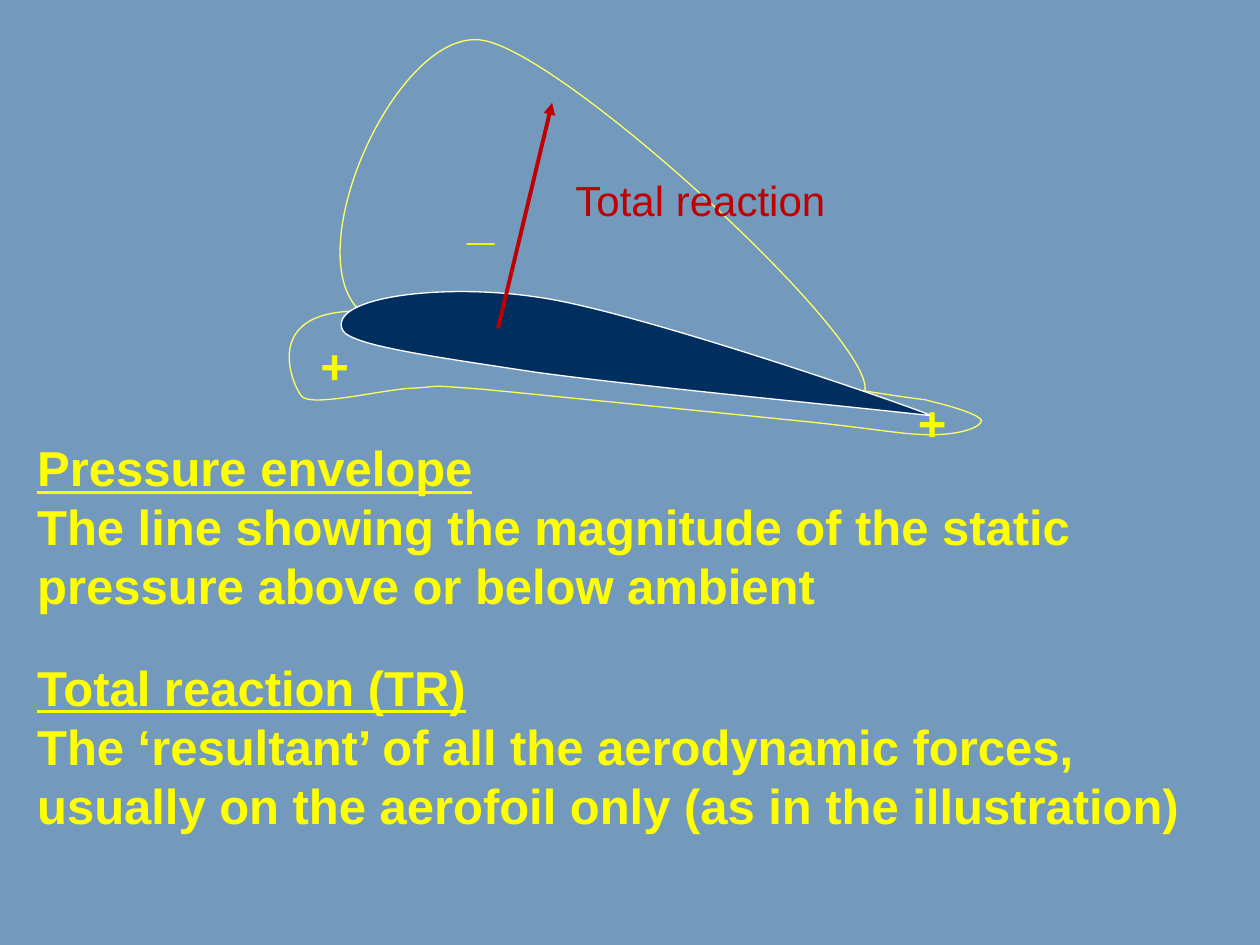
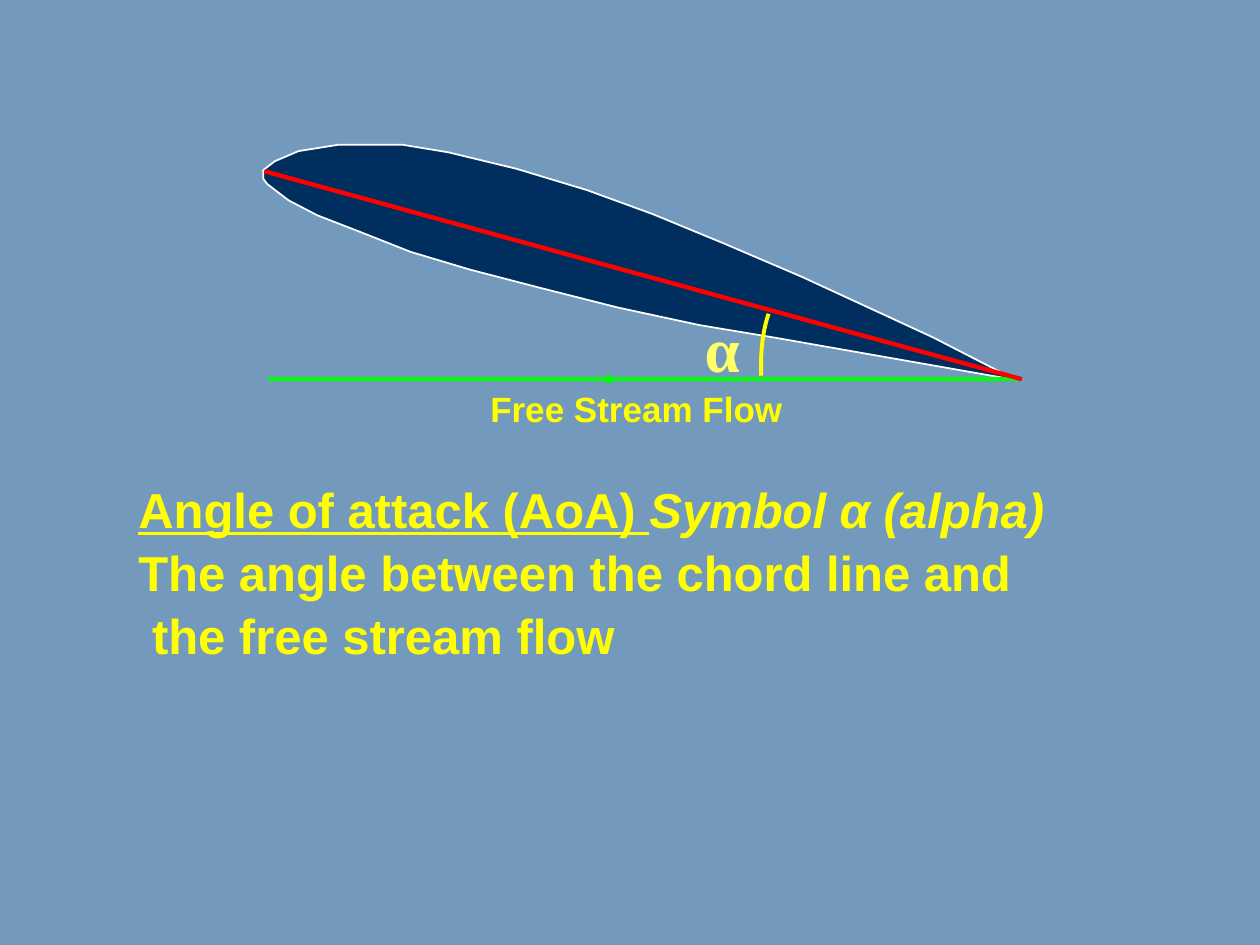
import copy

import pptx
import pptx.dml.color
import pptx.enum.shapes
import pptx.oxml
import pptx.oxml.ns
import pptx.util

Pt = pptx.util.Pt
RGBColor = pptx.dml.color.RGBColor
qn = pptx.oxml.ns.qn
DRAWING_NAMESPACE = pptx.oxml.ns.nsdecls("a")

SKY = RGBColor(0x73, 0x9A, 0xBC)
NAVY = RGBColor(0x00, 0x2F, 0x5F)
WHITE = RGBColor(0xFF, 0xFF, 0xFF)
YELLOW = RGBColor(0xFF, 0xFF, 0x00)
SIGN_YELLOW = RGBColor(0xFA, 0xFD, 0x00)
PALE_YELLOW = RGBColor(0xFF, 0xFF, 0x66)
DARK_RED = RGBColor(0xC0, 0x00, 0x00)
RED = RGBColor(0xFF, 0x00, 0x00)
GREEN = RGBColor(0x00, 0xFF, 0x00)

SPACE_WIDTH = 7.8

# Definitions: (top, heading, explanation)
DEFINITIONS = [
    (246.7, "Pressure envelope",
     "The line showing the magnitude of the static pressure above or below ambient"),
    (372.2, "Total reaction (TR)",
     "The ‘resultant’ of all the aerodynamic forces, usually on the aerofoil only "
     "(as in the illustration)"),
]
# Pressure signs: (text, left, top)
PRESSURE_SIGNS = [("+", 176, 187.9), ("+", 517.5, 221), ("_", 259.9, 105.1)]

# Curves: a start point, then two control points and an end point per segment
SUCTION_ENVELOPE = [
    (205.9, 177.8),
    (169.2, 144), (227.5, 15.1), (275.8, 23),
    (324, 31), (505.4, 198.7), (493.9, 224.6),
]
PRESSURE_ENVELOPE = [
    (203, 177.8),
    (150.5, 178.6), (166.3, 218.2), (172.1, 226.1),
    (177.1, 233.3), (218.2, 222.5), (236.2, 221.8),
    (253.4, 221), (239.8, 219.6), (276.5, 222.5),
    (313.9, 226.1), (414, 236.2), (456.5, 240.5),
    (499.7, 244.8), (514.8, 248.4), (532.1, 248.4),
    (549.4, 248.4), (560.2, 244.1), (560.9, 240.5),
    (560.9, 237.6), (545.8, 232.6), (533.5, 229.7),
    (522, 226.8), (542.9, 231.1), (488.2, 222.5),
    (432.7, 213.8), (257.8, 182.9), (203, 177.8),
]
# The cambered aerofoil lies level here and is turned when drawn
AEROFOIL_TILT = 8.4
CAMBERED_AEROFOIL = [
    (196, 212.8),
    (184.8, 195.6), (248.3, 177.5), (304.5, 177.9),
    (361.1, 177.5), (533.4, 210.3), (535.9, 212.1),
    (493.1, 213.4), (363.8, 220.1), (307.1, 220.5),
    (250.3, 220.2), (201.7, 220.8), (196, 212.8),
]
ANGLE_ARC = [
    (434.9, 214.6),
    (434.9, 212.4), (434.9, 210.2), (434.9, 208.1),
    (434.9, 198), (436.3, 187.9), (439.2, 179.3),
]
ANGLE_ARC_CENTRE = (469.4, 208.1)
# Corners of the straight-sided aerofoil
INCLINED_AEROFOIL = [
    (581.8, 217.4), (442.8, 193), (399.6, 185.8), (352.8, 175.7), (307.4, 164.2),
    (268.6, 154.1), (234.7, 144), (207.4, 133.2), (181.4, 123.1), (164.9, 114.5),
    (152.6, 105.1), (150.5, 102.2), (150.5, 97.2), (157, 92.2), (170.6, 86.4),
    (193, 82.8), (211, 82.8), (230.4, 82.8), (256.3, 87.1), (295.2, 96.5),
    (335.5, 108.7), (373, 122.4), (413.3, 139), (458.6, 158.4), (494.6, 175),
    (533.5, 193), (579.6, 216.7),
]


def add_outline(slide, points, line_color, line_width, fill_color=None, closed=False):
    corners = [(Pt(x), Pt(y)) for x, y in points]
    builder = slide.shapes.build_freeform(*corners[0])
    builder.add_line_segments(corners[1:], close=closed)
    outline = builder.convert_to_shape()
    outline.shadow.inherit = False
    if fill_color is None:
        outline.fill.background()
    else:
        outline.fill.solid()
        outline.fill.fore_color.rgb = fill_color
    outline.line.color.rgb = line_color
    outline.line.width = Pt(line_width)
    return outline


def outline_element(outline):
    return next(outline._element.iter(qn("a:path")))


def bend(outline):
    """Turn each full group of three straight segments into one cubic Bézier."""
    segments = outline_element(outline).findall(qn("a:lnTo"))
    for first in range(0, len(segments) - 2, 3):
        curve = pptx.oxml.parse_xml(f"<a:cubicBezTo {DRAWING_NAMESPACE}/>")
        segments[first].addprevious(curve)
        for segment in segments[first:first + 3]:
            curve.append(segment[0])
            segment.getparent().remove(segment)


def add_curve(slide, controls, line_color, line_width, fill_color=None):
    outline = add_outline(slide, controls, line_color, line_width, fill_color, closed=True)
    bend(outline)
    return outline


def add_angle_arc(slide):
    """Draw the arc with a line, and its sector up to the centre without one."""
    arc = add_outline(slide, ANGLE_ARC + [ANGLE_ARC_CENTRE], YELLOW, 2.25)
    bend(arc)
    stroke = outline_element(arc)
    sector = copy.deepcopy(stroke)
    sector.set("stroke", "0")
    sector.append(pptx.oxml.parse_xml(f"<a:close {DRAWING_NAMESPACE}/>"))
    stroke.remove(stroke.find(qn("a:lnTo")))
    stroke.set("fill", "none")
    stroke.addnext(sector)


def add_line(slide, start, end, color, width, arrow=False):
    line = slide.shapes.add_connector(
        pptx.enum.shapes.MSO_CONNECTOR.STRAIGHT,
        Pt(start[0]), Pt(start[1]), Pt(end[0]), Pt(end[1]))
    line.line.color.rgb = color
    line.line.width = Pt(width)
    properties = line._element.spPr
    if arrow:
        properties.find(qn("a:ln")).append(pptx.oxml.parse_xml(
            f'<a:tailEnd {DRAWING_NAMESPACE} type="triangle"/>'))
    properties.append(pptx.oxml.parse_xml(f"<a:effectLst {DRAWING_NAMESPACE}/>"))


def add_text(slide, paragraphs, left, top, width, height, size=28, color=YELLOW,
             bold=True, font="Arial", wrap=False):
    """Add a text box and return its paragraphs; each one is given as a list of spans."""
    box = slide.shapes.add_textbox(Pt(left), Pt(top), Pt(width), Pt(height))
    frame = box.text_frame
    frame.word_wrap = wrap
    for number, spans in enumerate(paragraphs):
        paragraph = frame.paragraphs[0] if number == 0 else frame.add_paragraph()
        for text in spans:
            paragraph.add_run().text = text
        paragraph.font.name = font
        paragraph.font.size = Pt(size)
        paragraph.font.bold = bold
        paragraph.font.color.rgb = color
    return frame.paragraphs


def add_definition(slide, top, heading, explanation):
    paragraphs = add_text(slide, [[heading], [explanation]],
                          14.2, top, 686.2, 108.7, wrap=True)
    paragraphs[0].font.underline = True


def add_total_reaction_slide(deck):
    slide = deck.slides.add_slide(deck.slide_layouts[6])
    pressure_definition, reaction_definition = DEFINITIONS
    add_definition(slide, *pressure_definition)
    for envelope in (SUCTION_ENVELOPE, PRESSURE_ENVELOPE):
        add_curve(slide, envelope, PALE_YELLOW, 0.75)
    aerofoil = add_curve(slide, CAMBERED_AEROFOIL, WHITE, 0.75, NAVY)
    aerofoil.rotation = AEROFOIL_TILT
    for sign, left, top in PRESSURE_SIGNS:
        add_text(slide, [[sign]], left, top, 31, 41, color=SIGN_YELLOW)
    add_text(slide, [["Total reaction"]], 321.8, 96.1, 158.4, 36,
             size=24, color=DARK_RED, bold=False)
    add_line(slide, (284.6, 187.7), (315.5, 58.8), DARK_RED, 2.25, arrow=True)
    add_definition(slide, *reaction_definition)


def add_angle_of_attack_slide(deck):
    slide = deck.slides.add_slide(deck.slide_layouts[6])
    add_outline(slide, INCLINED_AEROFOIL, WHITE, 1, NAVY)
    paragraphs = add_text(
        slide,
        [["Angle of attack (AoA) ", "Symbol α (alpha)"],
         ["The angle between the chord line and"],
         ["the free stream flow"]],
        72, 274.3, 594, 112.3, wrap=True)
    heading, symbol = paragraphs[0].runs
    heading.font.underline = True
    symbol.font.italic = True
    for number, paragraph in enumerate(paragraphs):
        paragraph.line_spacing = 0.9
        paragraph.space_before = Pt(5.8 if number else 0)
    paragraphs[2]._p.get_or_add_pPr().set("marL", str(Pt(SPACE_WIDTH)))

    add_line(slide, (582.5, 216.7), (153.4, 216.7), GREEN, 2)
    add_line(slide, (278.6, 216.7), (352.8, 216.7), GREEN, 2, arrow=True)
    add_text(slide, [["α"]], 395.5, 173.5, 34.6, 50.4,
             size=36, color=PALE_YELLOW, font="Times New Roman")
    add_angle_arc(slide)
    add_line(slide, (151.2, 97.9), (583.9, 216.7), RED, 2.5)
    add_text(slide, [["Free Stream Flow"]], 273.1, 217.8, 182.2, 31, size=20)


def main():
    deck = pptx.Presentation()
    deck.slide_width, deck.slide_height = Pt(720), Pt(540)
    background = deck.slide_master.background.fill
    background.solid()
    background.fore_color.rgb = SKY
    add_total_reaction_slide(deck)
    add_angle_of_attack_slide(deck)
    deck.save("out.pptx")


if __name__ == "__main__":
    main()
